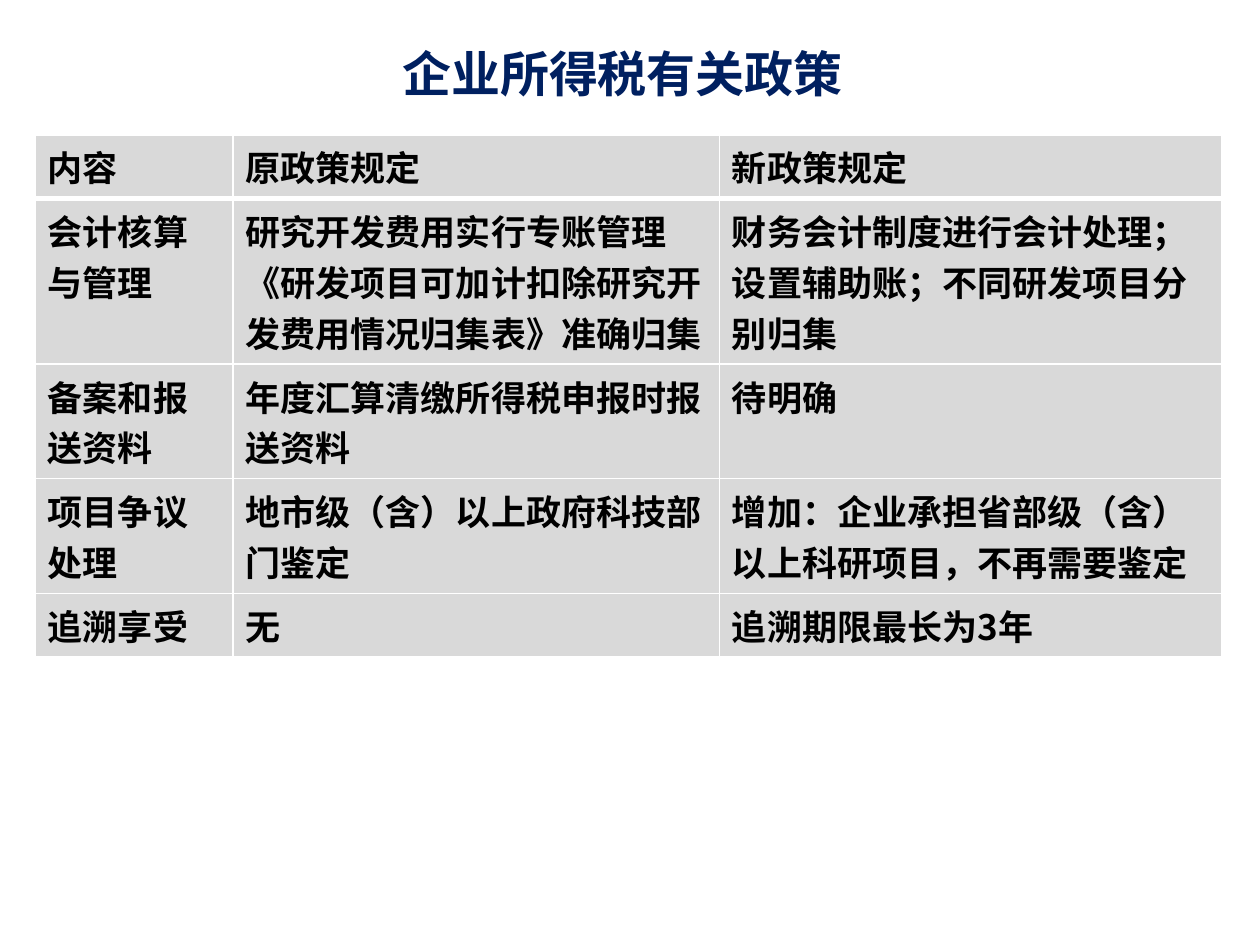
from dataclasses import dataclass

from lxml import etree
from pptx import Presentation
from pptx import util as u
from pptx.dml.color import RGBColor
from pptx.enum import text
from pptx.oxml.ns import qn


@dataclass(frozen=True)
class Theme:
    navy: str = "002060"
    ink: str = "000000"
    cell: str = "D9D9D9"
    rule: str = "FFFFFF"
    title_size: int = 28
    body_size: int = 20
    latin: str = "Calibri"
    chinese: str = "Noto Sans CJK SC"
    thin: int = 1
    thick: int = 3


@dataclass(frozen=True)
class Box:
    left: float
    top: float
    width: float
    height: float

    def lengths(self) -> tuple:
        return tuple(u.Inches(v) for v in (self.left, self.top, self.width, self.height))


@dataclass(frozen=True)
class Policy:
    topic: str
    former: str
    revised: str
    lines: int = 1


THEME = Theme()
LINE_HEIGHT = 0.405
ROW_PADDING = 0.1
TITLE_BOX = Box(0.5, 0.3, 8.88, 0.56)
COLUMNS = (1.57, 3.86, 3.99)
POLICIES = (
    Policy("内容", "原政策规定", "新政策规定"),
    Policy(
        "会计核算与管理",
        "研究开发费用实行专账管理\n《研发项目可加计扣除研究开发费用情况归集表》准确归集",
        "财务会计制度进行会计处理；设置辅助账；不同研发项目分别归集",
        3,
    ),
    Policy("备案和报送资料", "年度汇算清缴所得税申报时报送资料", "待明确", 2),
    Policy(
        "项目争议处理",
        "地市级（含）以上政府科技部门鉴定",
        "增加：企业承担省部级（含）以上科研项目，不再需要鉴定",
        2,
    ),
    Policy("追溯享受", "无", "追溯期限最长为3年"),
)


def row_height(policy: Policy) -> float:
    return policy.lines * LINE_HEIGHT + ROW_PADDING


TABLE_BOX = Box(0.28, 1.07, sum(COLUMNS), sum(map(row_height, POLICIES)))


def write(frame, wording: str, color: str, size: int, latin: str, align) -> None:
    frame.text = wording
    font_format = {"name": latin, "size": u.Pt(size), "bold": True}
    for paragraph in frame.paragraphs:
        paragraph.alignment = align
        for run in paragraph.runs:
            for attribute, value in font_format.items():
                setattr(run.font, attribute, value)
            run.font.color.rgb = RGBColor.from_string(color)
            east_asian = etree.SubElement(run.font._element, qn("a:ea"))
            east_asian.set("typeface", THEME.chinese)


def rule_cell(cell, widths: dict[str, int]) -> None:
    properties = cell._tc.get_or_add_tcPr()
    for side, width in widths.items():
        line = etree.SubElement(properties, qn(f"a:ln{side}"), w=str(u.Pt(width)))
        paint = etree.SubElement(line, qn("a:solidFill"))
        etree.SubElement(paint, qn("a:srgbClr"), val=THEME.rule)


def draw_title(slide, wording: str) -> None:
    frame = slide.shapes.add_textbox(*TITLE_BOX.lengths()).text_frame
    frame_format = {"word_wrap": True, "vertical_anchor": text.MSO_ANCHOR.MIDDLE}
    for attribute, value in frame_format.items():
        setattr(frame, attribute, value)
    write(frame, wording, THEME.navy, THEME.title_size, THEME.latin, text.PP_ALIGN.CENTER)


def draw_policies(slide, policies: tuple[Policy, ...]) -> None:
    table = slide.shapes.add_table(len(policies), len(COLUMNS), *TABLE_BOX.lengths()).table
    for column, width in zip(table.columns, COLUMNS):
        column.width = u.Inches(width)
    for index, (row, policy) in enumerate(zip(table.rows, policies)):
        row.height = u.Inches(row_height(policy))
        widths = {
            "L": THEME.thin,
            "R": THEME.thin,
            "T": THEME.thick if index == 1 else THEME.thin,
            "B": THEME.thick if index == 0 else THEME.thin,
        }
        for cell, wording in zip(row.cells, (policy.topic, policy.former, policy.revised)):
            write(cell.text_frame, wording, THEME.ink, THEME.body_size,
                  THEME.chinese, text.PP_ALIGN.LEFT)
            rule_cell(cell, widths)
            cell.fill.solid()
            cell.fill.fore_color.rgb = RGBColor.from_string(THEME.cell)


def main() -> None:
    deck = Presentation()
    deck.slide_width, deck.slide_height = u.Inches(10), u.Inches(7.5)
    slide = deck.slides.add_slide(deck.slide_layouts[6])
    draw_title(slide, "企业所得税有关政策")
    draw_policies(slide, POLICIES)
    deck.save("out.pptx")


if __name__ == "__main__":
    main()
